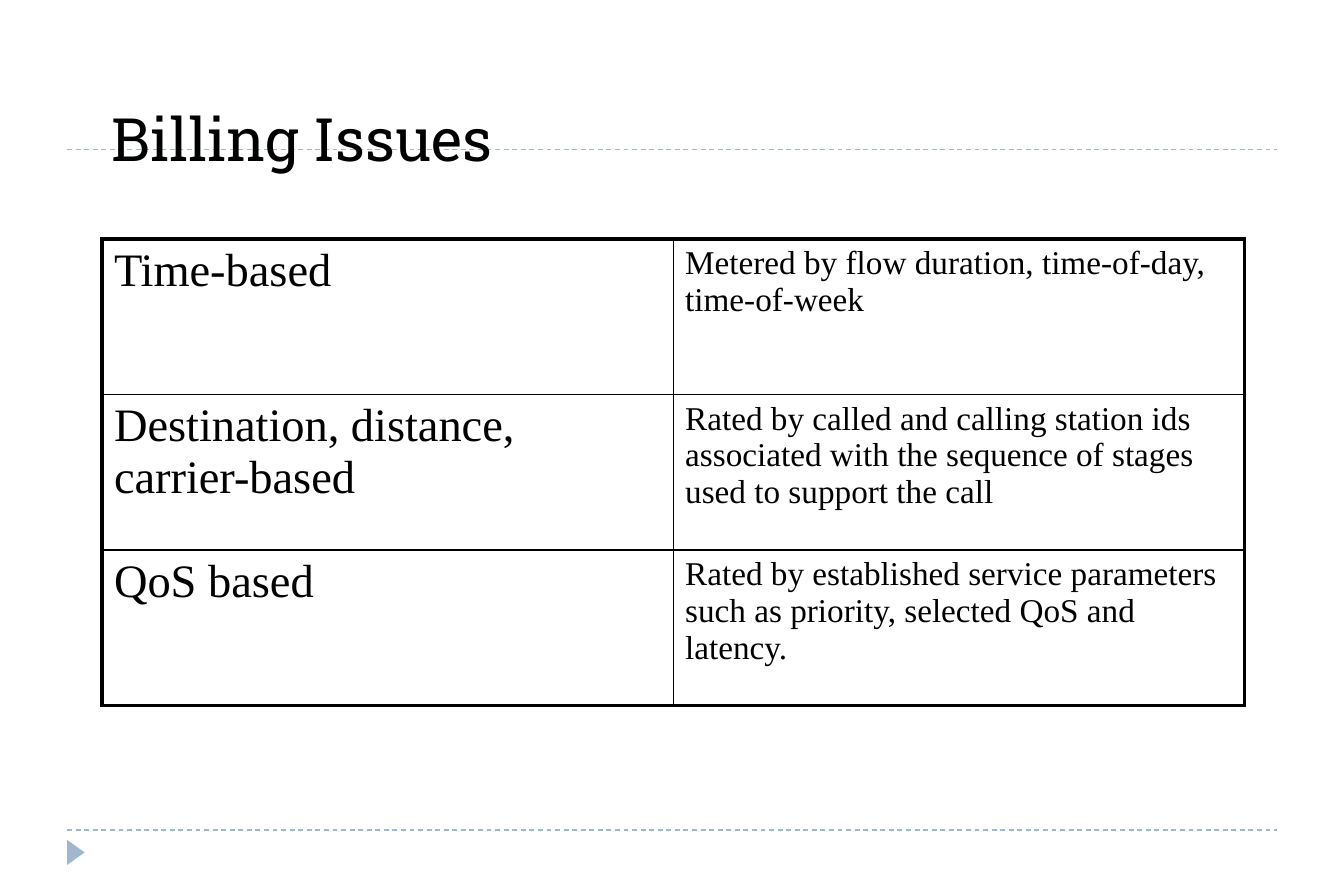
import dataclasses

import pptx
import pptx.dml.color
import pptx.enum.dml
import pptx.enum.shapes
import pptx.enum.text
import pptx.oxml
import pptx.oxml.ns
import pptx.util

PX = pptx.util.Inches(1) // 96
ROWS = [
    ("Time-based", "Metered by flow duration, time-of-day, time-of-week"),
    ("Destination, distance, carrier-based",
     "Rated by called and calling station ids associated with the sequence "
     "of stages used to support the call"),
    ("QoS based",
     "Rated by established service parameters such as priority, selected "
     "QoS and latency."),
]


@dataclasses.dataclass(frozen=True)
class Theme:
    ink: str = "000000"
    accent: str = "9FB8CD"
    title_font: str = "Roboto Slab"
    body_font: str = "Times New Roman"
    title_size: int = 36
    column_sizes: tuple = (28, 20)
    rule: float = 0.75
    inner_border: float = 1
    outer_border: float = 2.25


THEME = Theme()


def px(*values):
    return [v * PX for v in values]


def rgb(value):
    return pptx.dml.color.RGBColor.from_string(value)


def apply(obj, formats):
    for name, value in formats.items():
        setattr(obj, name, value)


def write(tf, text, font, size):
    r = tf.paragraphs[0].add_run()
    r.text = text
    apply(r.font, {"name": font, "size": pptx.util.Pt(size)})
    r.font.color.rgb = rgb(THEME.ink)


def add_rule(s, left, right, y):
    """Draw a dashed horizontal line."""
    line = s.shapes.add_connector(
        pptx.enum.shapes.MSO_CONNECTOR.STRAIGHT, *px(left, y, right, y))
    apply(line.line, {"width": pptx.util.Pt(THEME.rule),
                      "dash_style": pptx.enum.dml.MSO_LINE.DASH})
    line.line.color.rgb = rgb(THEME.accent)
    effects = pptx.oxml.parse_xml(
        f"<a:effectLst {pptx.oxml.ns.nsdecls('a')}/>")
    line._element.spPr.append(effects)


def add_marker(s, *box):
    """Draw the triangle that points right."""
    sp = s.shapes.add_shape(
        pptx.enum.shapes.MSO_SHAPE.ISOSCELES_TRIANGLE, *px(*box))
    sp.rotation = 90
    sp.shadow.inherit = False
    sp.fill.solid()
    sp.fill.fore_color.rgb = rgb(THEME.accent)
    sp.line.fill.background()


def add_title(s, text, *box):
    tf = s.shapes.add_textbox(*px(*box)).text_frame
    apply(tf, {"word_wrap": True,
               "vertical_anchor": pptx.enum.text.MSO_ANCHOR.BOTTOM})
    write(tf, text, THEME.title_font, THEME.title_size)


def set_borders(cell, outer):
    """Draw all four sides, thick where the side is on the table's edge."""
    tc_pr = cell._tc.get_or_add_tcPr()
    for side in "LRTB":
        width = THEME.outer_border if side in outer else THEME.inner_border
        tc_pr.append(pptx.oxml.parse_xml(
            f'<a:ln{side} {pptx.oxml.ns.nsdecls("a")} '
            f'w="{pptx.util.Pt(width)}"><a:solidFill>'
            f'<a:srgbClr val="{THEME.ink}"/></a:solidFill></a:ln{side}>'))


def add_grid(s, rows, left, top, column_width, row_height):
    n_rows, n_cols = len(rows), len(rows[0])
    table = s.shapes.add_table(
        n_rows, n_cols,
        *px(left, top, n_cols * column_width, n_rows * row_height)).table
    apply(table, {"first_row": False, "horz_banding": False})
    for i, row in enumerate(rows):
        for j, text in enumerate(row):
            cell = table.cell(i, j)
            edges = {"L": j == 0, "R": j == n_cols - 1,
                     "T": i == 0, "B": i == n_rows - 1}
            set_borders(cell, [side for side in edges if edges[side]])
            cell.fill.background()
            write(cell.text_frame, text, THEME.body_font,
                  THEME.column_sizes[j])


def main():
    prs = pptx.Presentation()
    width, height = px(1080, 720)
    apply(prs, {"slide_width": width, "slide_height": height})
    s = prs.slides.add_slide(prs.slide_layouts[6])
    for y in (667, 120):
        add_rule(s, 54, 1026, y)
    add_marker(s, 51, 678, 20, 14)
    add_title(s, "Billing Issues", 80, 24, 918, 120)
    add_grid(s, ROWS, 82, 192, 459, 125)
    prs.save("out.pptx")


if __name__ == "__main__":
    main()
